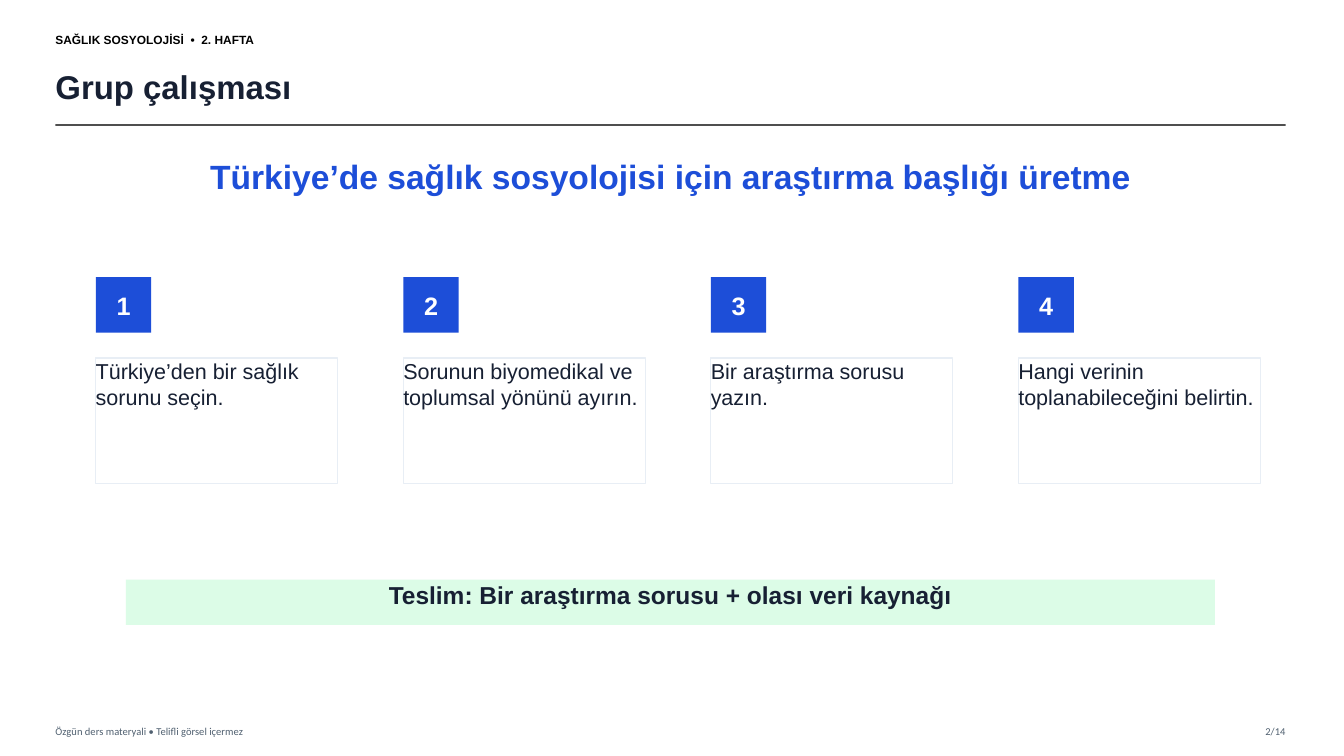
"""Build the group work slide: four numbered steps and a hand-in banner."""
import pptx
import pptx.dml.color
import pptx.enum.shapes
import pptx.enum.text
import pptx.oxml
import pptx.oxml.ns
import pptx.util

COURSE = "SAĞLIK SOSYOLOJİSİ  •  2. HAFTA"
TITLE = "Grup çalışması"
TASK = "Türkiye’de sağlık sosyolojisi için araştırma başlığı üretme"
STEPS = [
    "Türkiye’den bir sağlık sorunu seçin.",
    "Sorunun biyomedikal ve toplumsal yönünü ayırın.",
    "Bir araştırma sorusu yazın.",
    "Hangi verinin toplanabileceğini belirtin.",
]
HAND_IN = "Teslim: Bir araştırma sorusu + olası veri kaynağı"
CREDIT = "Özgün ders materyali • Telifli görsel içermez"
PAGE = "2/14"

COLORS = {
    "black": "000000", "ink": "172033", "rule": "333333", "muted": "506070",
    "blue": "1D4ED8", "white": "FFFFFF", "border": "E8EEF5", "mint": "DCFCE7",
}
PX = 9144
SLIDE_W, SLIDE_H = 1333, 750
LEFT, RIGHT = 55, 1275
STEP_LEFT, STEP_PITCH = 95, 305
BADGE_TOP, BADGE_SIZE = 275, 55
CARD_TOP, CARD_W, CARD_H = 355, 240, 125

ALIGN = pptx.enum.text.PP_ALIGN
ANCHOR = pptx.enum.text.MSO_ANCHOR
RECTANGLE = pptx.enum.shapes.MSO_SHAPE.RECTANGLE


def rgb(name):
    return pptx.dml.color.RGBColor.from_string(COLORS[name])


def px(*lengths):
    return [pptx.util.Emu(length * PX) for length in lengths]


def write(shape, text, size, color, bold=False, font="Arial",
          align=ALIGN.LEFT, anchor=ANCHOR.MIDDLE):
    frame = shape.text_frame
    frame.text = text
    frame_format = {
        "margin_left": 0, "margin_top": 0, "margin_right": 0, "margin_bottom": 0,
        "word_wrap": True, "vertical_anchor": anchor,
        "auto_size": pptx.enum.text.MSO_AUTO_SIZE.NONE,
    }
    for key, value in frame_format.items():
        setattr(frame, key, value)
    paragraph = frame.paragraphs[0]
    paragraph.alignment = align
    run_font = paragraph.runs[0].font
    for key, value in {"name": font, "size": pptx.util.Pt(size), "bold": bold}.items():
        setattr(run_font, key, value)
    run_font.color.rgb = rgb(color)


def add_text(slide, box, text, **style):
    write(slide.shapes.add_textbox(*px(*box)), text, **style)


def add_block(slide, box, fill, text, border=None, **style):
    block = slide.shapes.add_shape(RECTANGLE, *px(*box))
    block.shadow.inherit = False
    block.fill.solid()
    block.fill.fore_color.rgb = rgb(fill)
    if border:
        block.line.color.rgb = rgb(border)
        block.line.width = pptx.util.Pt(1)
    else:
        block.line.fill.background()
    write(block, text, **style)


def add_rule(slide, y):
    rule = slide.shapes.add_connector(
        pptx.enum.shapes.MSO_CONNECTOR.STRAIGHT, *px(LEFT, y, RIGHT, y))
    rule.line.color.rgb = rgb("rule")
    rule.line.width = pptx.util.Pt(1.2)
    properties = rule._element.spPr
    color = properties.find(".//" + pptx.oxml.ns.qn("a:srgbClr"))
    namespace = pptx.oxml.ns.nsdecls("a")
    color.append(pptx.oxml.parse_xml(f'<a:alpha {namespace} val="85000"/>'))
    properties.append(pptx.oxml.parse_xml(f"<a:effectLst {namespace}/>"))


def main():
    deck = pptx.Presentation()
    deck.slide_width, deck.slide_height = px(SLIDE_W, SLIDE_H)
    slide = deck.slides.add_slide(deck.slide_layouts[5])

    add_text(slide, (LEFT, 25, 360, 28), COURSE, size=8.5, color="black", bold=True)
    title = slide.shapes.title
    for key, value in zip(("left", "top", "width", "height"), px(LEFT, 58, 1195, 55)):
        setattr(title, key, value)
    write(title, TITLE, size=23.5, color="ink", bold=True)
    add_rule(slide, 124)

    footer = {"size": 7.5, "color": "muted", "font": "Calibri"}
    add_text(slide, (LEFT, 714, 600, 22), CREDIT, **footer)
    add_text(slide, (RIGHT - 65, 714, 65, 22), PAGE, align=ALIGN.RIGHT, **footer)

    add_text(slide, (75, 155, 1180, 65), TASK, size=24, color="blue", bold=True,
             align=ALIGN.CENTER, anchor=ANCHOR.TOP)
    for index, step in enumerate(STEPS):
        x = STEP_LEFT + index * STEP_PITCH
        add_block(slide, (x, BADGE_TOP, BADGE_SIZE, BADGE_SIZE), "blue", str(index + 1),
                  size=18, color="white", bold=True, align=ALIGN.CENTER)
        add_block(slide, (x, CARD_TOP, CARD_W, CARD_H), "white", step, border="border",
                  size=15.4, color="ink", anchor=ANCHOR.TOP)
    add_block(slide, (125, 575, 1080, 45), "mint", HAND_IN, size=17.5, color="ink",
              bold=True, align=ALIGN.CENTER, anchor=ANCHOR.TOP)

    deck.save("out.pptx")


if __name__ == "__main__":
    main()
